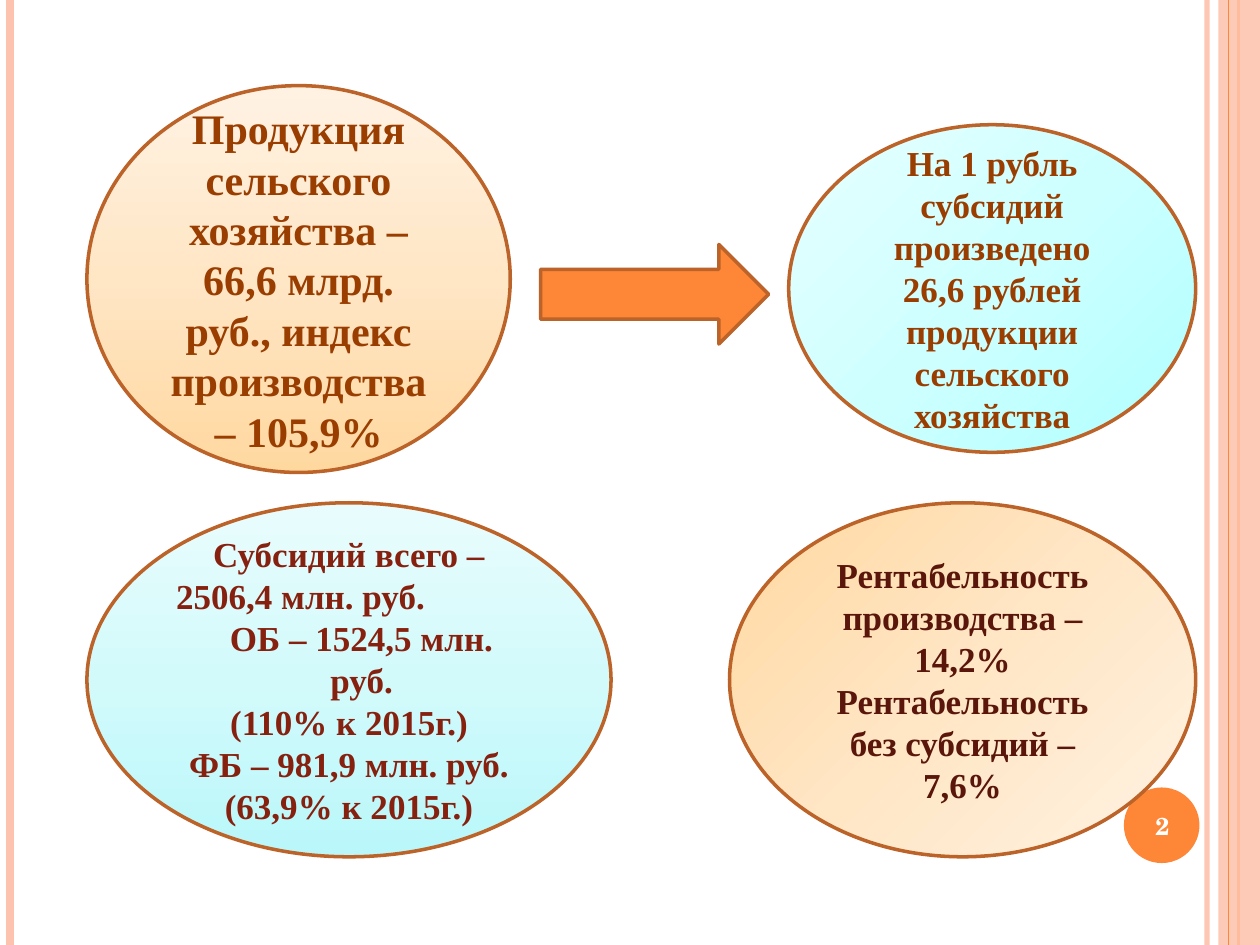
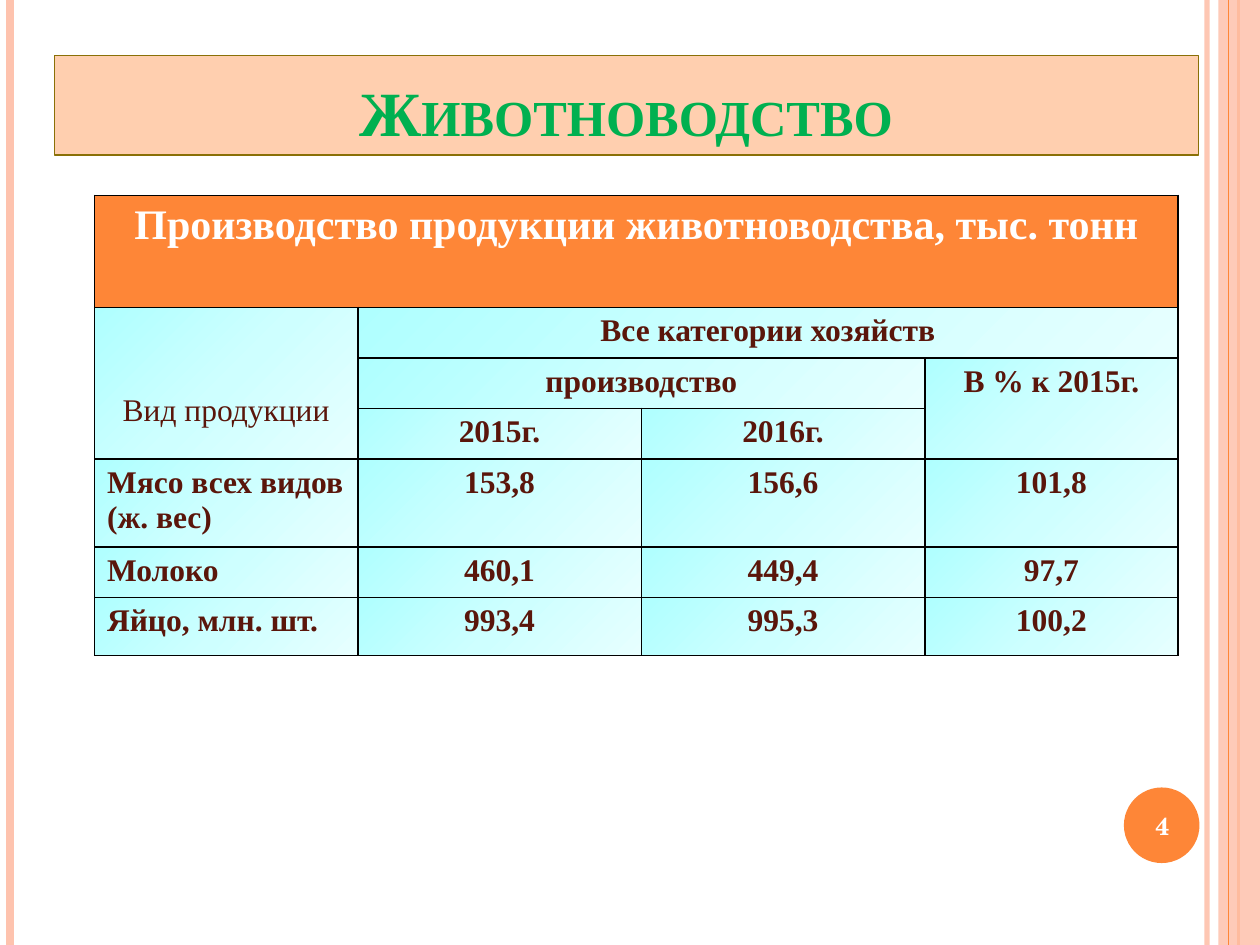
import pptx
import pptx.dml.color
import pptx.enum.shapes
import pptx.enum.text
import pptx.oxml
import pptx.oxml.ns
import pptx.util

RGBColor = pptx.dml.color.RGBColor
Shape = pptx.enum.shapes.MSO_SHAPE
Anchor = pptx.enum.text.MSO_ANCHOR
Align = pptx.enum.text.PP_ALIGN
Pt = pptx.util.Pt
qn = pptx.oxml.ns.qn

WHITE = RGBColor(0xFF, 0xFF, 0xFF)
BLACK = RGBColor(0x00, 0x00, 0x00)
ORANGE = RGBColor(0xFE, 0x86, 0x37)
RUST = RGBColor(0xBC, 0x63, 0x29)
PINK = RGBColor(0xFE, 0xC3, 0xAE)
PEACH = RGBColor(0xFF, 0xCF, 0xAF)
OLIVE = RGBColor(0x8A, 0x70, 0x07)
GREEN = RGBColor(0x00, 0xB0, 0x50)
BROWN = RGBColor(0x9A, 0x3D, 0x01)
BRICK = RGBColor(0x86, 0x21, 0x10)
MAROON = RGBColor(0x5A, 0x16, 0x0B)

SAND_BLEND = (RGBColor(0xFF, 0xD8, 0xA0), RGBColor(0xFF, 0xE6, 0xC5), RGBColor(0xFF, 0xF2, 0xE3))
AQUA_BLEND = (RGBColor(0xAF, 0xFF, 0xFF), RGBColor(0xCE, 0xFF, 0xFF), RGBColor(0xE7, 0xFF, 0xFF))
SKY_BLEND = (RGBColor(0xB9, 0xF7, 0xFA), RGBColor(0xD3, 0xFA, 0xFB), RGBColor(0xE9, 0xFC, 0xFD))

BODY_FONT = "Times New Roman"
NUMBER_FONT = "TeX Gyre Schola"
COLUMNS, ROWS = 20, 15


def xml(tag, body="", **attributes):
    listed = "".join(f' {name}="{value}"' for name, value in attributes.items())
    namespace = pptx.oxml.ns.nsdecls("a")
    return pptx.oxml.parse_xml(f"<a:{tag} {namespace}{listed}>{body}</a:{tag}>")


def solid(colour):
    return f'<a:solidFill><a:srgbClr val="{colour}"/></a:solidFill>'


def set_alpha(properties, percent):
    """Make the first colour inside the properties partly transparent."""
    colour = next(properties.iter(qn("a:srgbClr")))
    colour.append(xml("alpha", val=percent * 1000))


def blend(fill, properties, colours, angle):
    """Fill with evenly spaced colours; the angle runs clockwise."""
    fill.gradient()
    fill.gradient_angle = 360 - angle
    stops = next(properties.iter(qn("a:gsLst")))
    for stop in list(stops):
        stops.remove(stop)
    for index, colour in enumerate(colours):
        position = index * 100000 // (len(colours) - 1)
        stops.append(xml("gs", f'<a:srgbClr val="{colour}"/>', pos=position))


class Deck:
    def __init__(self):
        self.show = pptx.Presentation()
        self.show.slide_width = pptx.util.Inches(10)
        self.show.slide_height = pptx.util.Inches(7.5)
        self.slide = None

    def across(self, columns):
        return round(self.show.slide_width * columns / COLUMNS)

    def down(self, rows):
        return round(self.show.slide_height * rows / ROWS)

    def box(self, left, top, width, height):
        return self.across(left), self.down(top), self.across(width), self.down(height)

    def start(self, number, title=None):
        layout = self.show.slide_layouts[5 if title else 6]
        self.slide = self.show.slides.add_slide(layout)
        self.rail(19.16, PINK, 3, alpha=93)
        self.rail(0.16, PINK, 4.5)
        self.rail(19.66, ORANGE, 1.5)
        band = self.shape(Shape.RECTANGLE, (19.34, 0, 0.66, 15), PINK)
        set_alpha(band.element.spPr, 87)
        self.rail(19.5, ORANGE, 0.75)
        self.shape(Shape.OVAL, (17.84, 12.5, 1.2, 1.2), ORANGE)
        if title:
            self.title(title)
        return number

    def rail(self, column, colour, weight, alpha=None):
        x = self.across(column)
        line = self.slide.shapes.add_connector(
            pptx.enum.shapes.MSO_CONNECTOR.STRAIGHT, x, 0, x, self.down(ROWS))
        line.line.color.rgb = colour
        line.line.width = Pt(weight)
        if alpha:
            set_alpha(line.element.spPr, alpha)
        line.element.spPr.append(xml("effectLst"))

    def shape(self, kind, place, colour=None, edge=None):
        drawn = self.slide.shapes.add_shape(kind, *self.box(*place))
        drawn.shadow.inherit = False
        if colour is not None:
            drawn.fill.solid()
            drawn.fill.fore_color.rgb = colour
        if edge is None:
            drawn.line.fill.background()
        else:
            drawn.line.color.rgb = edge
            drawn.line.width = Pt(2)
        return drawn

    def style(self, paragraph, size, colour, bold=True, font=BODY_FONT,
              align=Align.CENTER, outline=None):
        paragraph.alignment = align
        for run in paragraph.runs:
            run.font.name = font
            run.font.size = Pt(size)
            run.font.bold = bold
            run.font.color.rgb = colour
            if outline is not None:
                run.font._element.insert(0, xml("ln", solid(outline), w=Pt(0.75)))

    def title(self, words):
        heading = self.slide.shapes.title
        heading.left, heading.top, heading.width, heading.height = self.box(0.86, 0.88, 18.16, 1.58)
        heading.fill.solid()
        heading.fill.fore_color.rgb = PEACH
        heading.line.color.rgb = OLIVE
        heading.line.width = Pt(0.75)
        frame = heading.text_frame
        frame.text = words
        frame.auto_size = pptx.enum.text.MSO_AUTO_SIZE.NONE
        frame.vertical_anchor = Anchor.BOTTOM
        self.style(frame.paragraphs[0], 36, GREEN, outline=MAROON)
        frame.paragraphs[0].runs[0].font._element.set("cap", "small")

    def bubble(self, place, lines, size, colour, colours, angle):
        oval = self.shape(Shape.OVAL, place, edge=RUST)
        blend(oval.fill, oval.element.spPr, colours, angle)
        frame = oval.text_frame
        frame.text = "\n".join(lines)
        frame.word_wrap = True
        frame.vertical_anchor = Anchor.MIDDLE
        for paragraph in frame.paragraphs:
            self.style(paragraph, size, colour, outline=GREEN)
        return frame.paragraphs

    def page_number(self, number):
        label = self.slide.shapes.add_textbox(*self.box(17.78, 12.54, 1.34, 1.14))
        frame = label.text_frame
        frame.word_wrap = True
        frame.text = str(number)
        frame.vertical_anchor = Anchor.MIDDLE
        self.style(frame.paragraphs[0], 14, WHITE, font=NUMBER_FONT)

    def table(self, place, widths, heights, merges, texts):
        grid = self.slide.shapes.add_table(len(heights), len(widths), *self.box(*place)).table
        grid.first_row = grid.horz_banding = False
        for column, width in zip(grid.columns, widths):
            column.width = self.across(width)
        for row, height in zip(grid.rows, heights):
            row.height = self.down(height)
        for top, left, bottom, right in merges:
            grid.cell(top, left).merge(grid.cell(bottom, right))
        for r, row in enumerate(texts):
            for c, words in enumerate(row):
                self.cell(grid.cell(r, c), words, heading=r == 0, label=c == 0 and r > 3)
        return grid

    def cell(self, cell, words, heading, label):
        properties = cell._tc.get_or_add_tcPr()
        for side in ("lnL", "lnR", "lnT", "lnB"):
            properties.append(xml(side, solid(BLACK), w=Pt(1)))
        if heading:
            cell.fill.solid()
            cell.fill.fore_color.rgb = ORANGE
        else:
            blend(cell.fill, properties, AQUA_BLEND, 45)
        if words:
            cell.text = words
            self.style(cell.text_frame.paragraphs[0], 24 if heading else 18,
                       WHITE if heading else MAROON,
                       align=Align.LEFT if label else Align.CENTER)


def subsidies(deck):
    number = deck.start(2)
    deck.bubble((1.38, 1.36, 6.72, 6.14),
                ["Продукция сельского хозяйства – 66,6 млрд. руб., индекс производства – 105,9%"],
                24, BROWN, SAND_BLEND, 270)
    deck.shape(Shape.RIGHT_ARROW, (8.58, 3.88, 3.62, 1.58), ORANGE, RUST)
    deck.bubble((12.52, 1.98, 6.46, 5.2),
                ["На 1 рубль субсидий произведено", "26,6 рублей продукции сельского хозяйства"],
                20, BROWN, AQUA_BLEND, 225)
    deck.bubble((11.58, 7.98, 7.4, 5.62),
                ["Рентабельность производства – 14,2%", "Рентабельность без субсидий – 7,6%"],
                20, MAROON, SAND_BLEND, 45)
    budget = deck.bubble((1.38, 7.98, 8.32, 5.62),
                         ["Субсидий всего –", "2506,4 млн. руб.", "ОБ – 1524,5 млн. руб.",
                          "(110% к 2015г.)", "ФБ – 981,9 млн. руб. (63,9% к 2015г.)"],
                         20, BRICK, SKY_BLEND, 270)
    total, regional = budget[1:3]
    total.alignment = Align.LEFT
    regional._p.get_or_add_pPr().set("marL", str(deck.across(0.4)))
    deck.page_number(number)


def livestock(deck):
    number = deck.start(4, "Животноводство")
    deck.page_number(number)
    output = deck.table(
        (1.5, 3.1, 17.16, 7.3),
        widths=(4.18, 4.5, 4.5, 4.02),
        heights=(1.78, 0.74, 0.72, 0.72, 1.3, 0.78, 0.92),
        merges=((0, 0, 0, 3), (1, 0, 3, 0), (1, 1, 1, 3), (2, 1, 2, 2), (2, 3, 3, 3)),
        texts=(("Производство продукции животноводства, тыс. тонн", "", "", ""),
               ("Вид продукции", "Все категории хозяйств", "", ""),
               ("", "производство", "", "В % к 2015г."),
               ("", "2015г.", "2016г.", ""),
               ("Мясо всех видов (ж. вес)", "153,8", "156,6", "101,8"),
               ("Молоко", "460,1", "449,4", "97,7"),
               ("Яйцо, млн. шт.", "993,4", "995,3", "100,2")))
    product = output.cell(1, 0)
    product.vertical_anchor = Anchor.BOTTOM
    product.margin_bottom = deck.down(0.48)
    product.text_frame.paragraphs[0].runs[0].font.bold = False


def main():
    deck = Deck()
    subsidies(deck)
    livestock(deck)
    deck.show.save("out.pptx")


if __name__ == "__main__":
    main()
